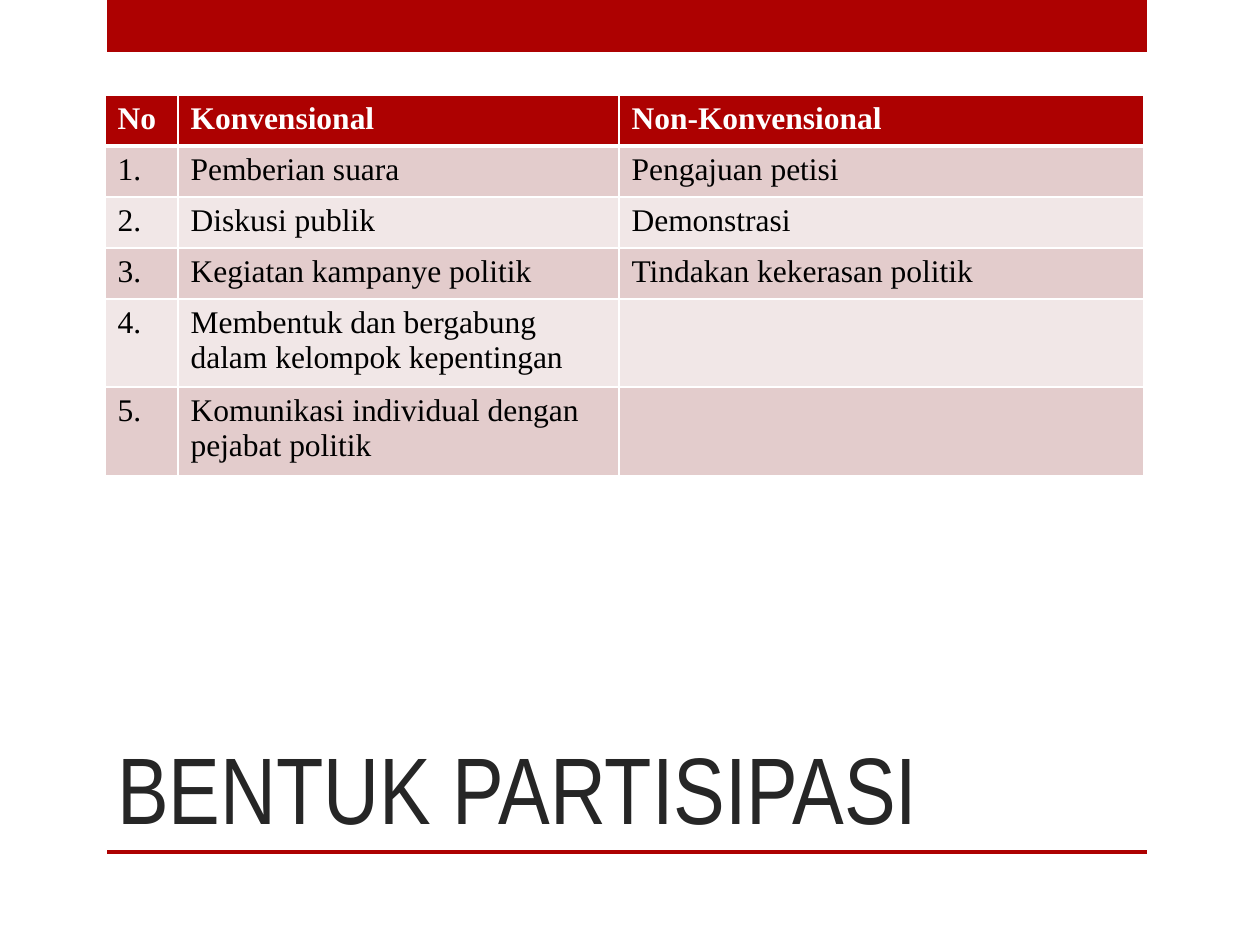
"""Builds a slide that tabulates conventional and non-conventional participation."""
from lxml import etree
from pptx import Presentation
from pptx.dml.color import RGBColor
from pptx.enum.shapes import MSO_SHAPE
from pptx.enum.text import MSO_ANCHOR
from pptx.oxml.ns import qn
from pptx.util import Pt

EMU_PER_INCH, PX_PER_INCH = 914400, 126
RECTANGLE = MSO_SHAPE.RECTANGLE
BOTTOM = MSO_ANCHOR.BOTTOM
COLORS = {
    "accent": "AD0101",
    "band_dark": "E3CCCC",
    "band_light": "F1E7E7",
    "title": "262626",
    "text": "000000",
    "white": "FFFFFF",
}
FORMATS = {
    "title": {"name": "Arial Narrow", "size": Pt(54), "bold": False},
    "header": {"name": "Times New Roman", "size": Pt(18), "bold": True},
    "body": {"name": "Times New Roman", "size": Pt(18), "bold": False},
}
ROWS = [
    ("No", "Konvensional", "Non-Konvensional"),
    ("1.", "Pemberian suara", "Pengajuan petisi"),
    ("2.", "Diskusi publik", "Demonstrasi"),
    ("3.", "Kegiatan kampanye politik", "Tindakan kekerasan politik"),
    ("4.", "Membentuk dan bergabung dalam kelompok kepentingan", ""),
    ("5.", "Komunikasi individual dengan pejabat politik", ""),
]
COLUMN_WIDTHS = [73, 441, 525]
ROW_HEIGHTS = [51, 51, 51, 51, 82, 82]


def px(value):
    return round(value * EMU_PER_INCH / PX_PER_INCH)


def rgb(color):
    return RGBColor.from_string(COLORS[color])


class SlideBuilder:
    def __init__(self, slide):
        self.slide = slide

    def set_text(self, text_frame, text, style, color):
        paragraph = text_frame.paragraphs[0]
        font = paragraph.font
        if text:
            run = paragraph.add_run()
            run.text = text
            font = run.font
        for name, value in FORMATS[style].items():
            setattr(font, name, value)
        font.color.rgb = rgb(color)

    def bar(self, left, top, width, height):
        shape = self.slide.shapes.add_shape(RECTANGLE, *map(px, (left, top, width, height)))
        shape.shadow.inherit = False
        shape.fill.solid()
        shape.fill.fore_color.rgb = rgb("accent")
        shape.line.fill.background()

    def title(self, text, left, top, width, height):
        box = self.slide.shapes.add_textbox(*map(px, (left, top, width, height)))
        frame = box.text_frame
        frame.word_wrap = True
        frame.vertical_anchor = BOTTOM
        self.set_text(frame, text, "title", "title")

    def borders(self, cell, widths):
        properties = cell._tc.get_or_add_tcPr()
        for position, (side, width) in enumerate(widths.items()):
            line = etree.Element(qn(f"a:ln{side}"), w=str(Pt(width)))
            fill = etree.SubElement(line, qn("a:solidFill"))
            etree.SubElement(fill, qn("a:srgbClr"), val=COLORS["white"])
            properties.insert(position, line)

    def table(self, rows, left, top, column_widths, row_heights):
        size = map(px, (left, top, sum(column_widths), sum(row_heights)))
        table = self.slide.shapes.add_table(len(rows), len(column_widths), *size).table
        for column, width in zip(table.columns, column_widths):
            column.width = px(width)
        for index, (row, height, texts) in enumerate(zip(table.rows, row_heights, rows)):
            row.height = px(height)
            if index == 0:
                style, color, fill = "header", "white", "accent"
            else:
                style, color = "body", "text"
                fill = "band_dark" if index % 2 else "band_light"
            widths = {"L": 1, "R": 1, "T": 3 if index == 1 else 1, "B": 3 if index == 0 else 1}
            for cell, text in zip(row.cells, texts):
                cell.fill.solid()
                cell.fill.fore_color.rgb = rgb(fill)
                self.borders(cell, widths)
                self.set_text(cell.text_frame, text, style, color)


def main():
    presentation = Presentation()
    presentation.slide_width, presentation.slide_height = px(1260), px(945)
    builder = SlideBuilder(presentation.slides.add_slide(presentation.slide_layouts[6]))
    builder.bar(107, 0, 1040, 52)
    builder.bar(107, 850, 1040, 4)
    builder.title("BENTUK PARTISIPASI", 105, 630, 935, 220)
    builder.table(ROWS, 105, 95, COLUMN_WIDTHS, ROW_HEIGHTS)
    presentation.save("out.pptx")


if __name__ == "__main__":
    main()
